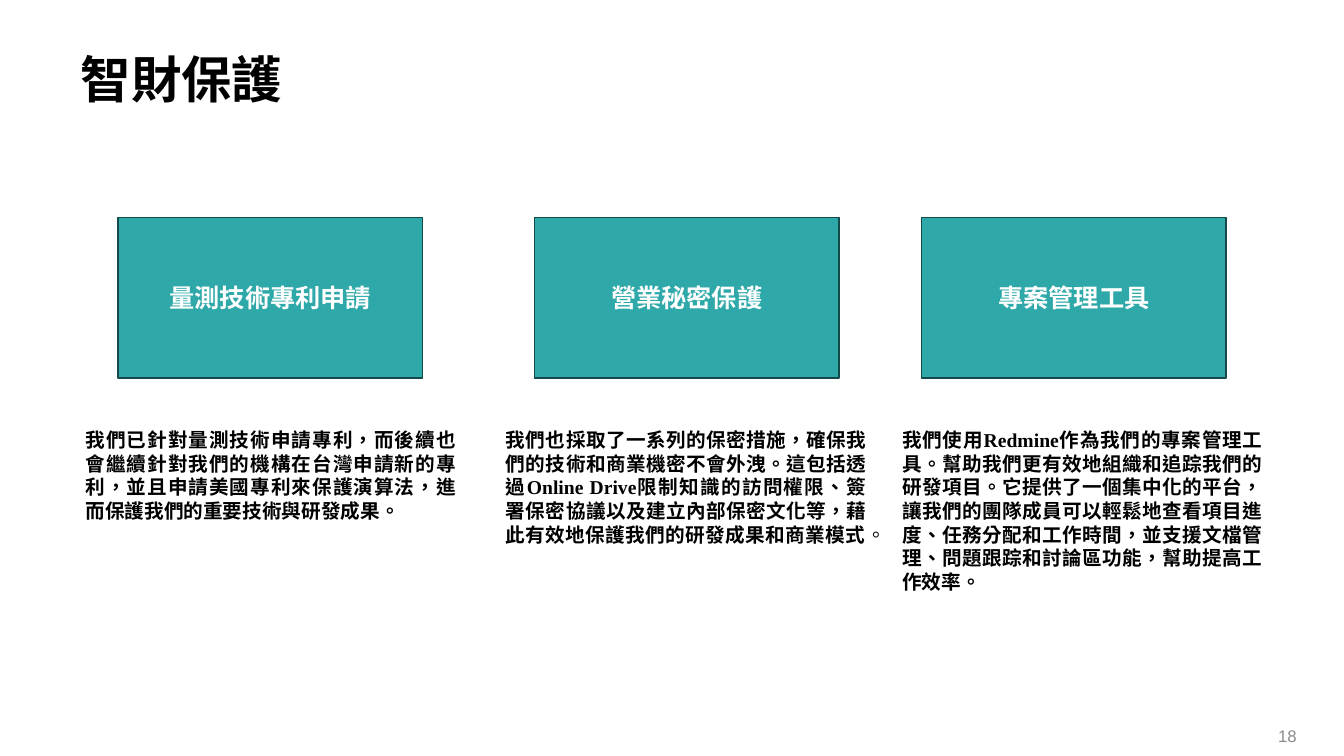
from pptx import Presentation
from pptx.dml.color import RGBColor
from pptx.enum.lang import MSO_LANGUAGE_ID
from pptx.enum.shapes import MSO_SHAPE
from pptx.enum.text import MSO_ANCHOR, PP_ALIGN
from pptx.util import Emu, Pt

PX = 9144  # 100 px to the inch
BLACK = RGBColor(0x00, 0x00, 0x00)
WHITE = RGBColor(0xFF, 0xFF, 0xFF)
GRAY = RGBColor(0x8C, 0x8C, 0x8C)
TEAL = RGBColor(0x2E, 0xA8, 0xA8)
DARK_TEAL = RGBColor(0x14, 0x4A, 0x4A)
TOP, MIDDLE = MSO_ANCHOR.TOP, MSO_ANCHOR.MIDDLE
LEFT, CENTER, RIGHT, JUSTIFY = PP_ALIGN.LEFT, PP_ALIGN.CENTER, PP_ALIGN.RIGHT, PP_ALIGN.JUSTIFY
RECTANGLE = MSO_SHAPE.RECTANGLE
CHINESE = MSO_LANGUAGE_ID.TRADITIONAL_CHINESE
SANS, SERIF = "Arial", "Times New Roman"
TITLE_ONLY = 5

# Card left, text left, text width, text font, heading, (text, bold) runs
COLUMNS = [
    (117, 75, 387, SANS, "量測技術專利申請", [
        ("我們已針對量測技術申請專利，而後續也會繼續針對我們的機構在台灣申請新的專利，"
         "並且申請美國專利來保護演算法，進而保護我們的重要技術與研發成果。", True)]),
    (530, 492, 377, SERIF, "營業秘密保護", [
        ("我們也採取了一系列的保密措施，確保我們的技術和商業機密不會外洩。"
         "這包括透過Online Drive限制知識的訪問權限、簽署保密協議以及建立內部保密文化等，"
         "藉此有效地保護我們的研發成果和商業模式", True),
        ("。", False)]),
    (914, 885, 377, SERIF, "專案管理工具", [
        ("我們使用Redmine作為我們的專案管理工具。幫助我們更有效地組織和追踪我們的研發項目。"
         "它提供了一個集中化的平台，讓我們的團隊成員可以輕鬆地查看項目進度、任務分配和工作時間，"
         "並支援文檔管理、問題跟踪和討論區功能，幫助提高工作效率。", True)]),
]


class SlideBuilder:
    def __init__(self, prs):
        self.slide = prs.slides.add_slide(prs.slide_layouts[TITLE_ONLY])

    def box(self, *lengths):
        return [Emu(n * PX) for n in lengths]

    def fill_text(self, sp, runs, size, color, align=LEFT, anchor=MIDDLE, font=SANS):
        tf = sp.text_frame
        tf.word_wrap = True
        tf.vertical_anchor = anchor
        p = tf.paragraphs[0]
        p.alignment = align
        for text, bold in runs:
            r = p.add_run()
            r.text = text
            r.font.color.rgb = color
            style = {"name": font, "size": Pt(size), "bold": bold, "language_id": CHINESE}
            for key, value in style.items():
                setattr(r.font, key, value)

    def title(self, text, *place):
        sp = self.slide.shapes.title
        sp.left, sp.top, sp.width, sp.height = self.box(*place)
        self.fill_text(sp, [(text, True)], 36, BLACK)

    def card(self, text, *place):
        sp = self.slide.shapes.add_shape(RECTANGLE, *self.box(*place))
        sp.shadow.inherit = False
        sp.fill.solid()
        sp.fill.fore_color.rgb = TEAL
        sp.line.color.rgb = DARK_TEAL
        sp.line.width = Pt(1)
        self.fill_text(sp, [(text, True)], 18, WHITE, CENTER)

    def text(self, runs, *place, **style):
        sp = self.slide.shapes.add_textbox(*self.box(*place))
        self.fill_text(sp, runs, **style)


def main():
    prs = Presentation()
    prs.slide_width, prs.slide_height = Emu(1333 * PX), Emu(750 * PX)
    s = SlideBuilder(prs)

    # Title and page number
    s.title("智財保護", 70, 40, 1227, 76)
    s.text([("18", False)], 1160, 710, 136, 40, size=12, color=GRAY, align=RIGHT)

    # Three cards, each with its description
    for card_left, text_left, text_width, font, heading, runs in COLUMNS:
        s.card(heading, card_left, 216, 302, 159)
        s.text(runs, text_left, 420, text_width, 175, size=14, color=BLACK,
               align=JUSTIFY, anchor=TOP, font=font)

    prs.save("out.pptx")


if __name__ == "__main__":
    main()
